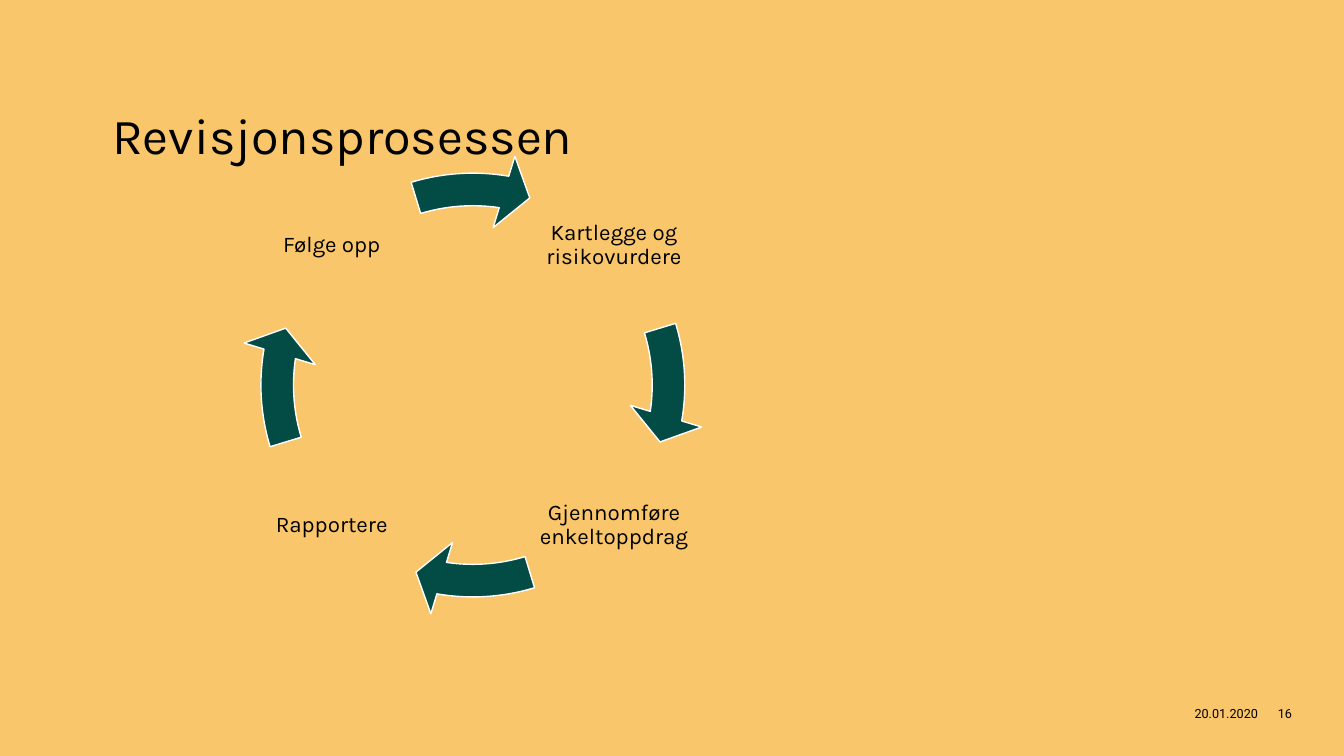
from pptx import Presentation
from pptx.dml.color import RGBColor
from pptx.enum.shapes import MSO_SHAPE
from pptx.enum.text import MSO_ANCHOR, MSO_AUTO_SIZE, PP_ALIGN
from pptx.util import Inches, Pt

LEFT, CENTER, RIGHT = PP_ALIGN.LEFT, PP_ALIGN.CENTER, PP_ALIGN.RIGHT
MIDDLE, BOTTOM = MSO_ANCHOR.MIDDLE, MSO_ANCHOR.BOTTOM
NO_AUTOFIT = MSO_AUTO_SIZE.NONE
CIRCULAR_ARROW = MSO_SHAPE.CIRCULAR_ARROW
TITLE_ONLY = 5

COLORS = {"background": "F9C66B", "text": "000000", "arrow": "034B45", "outline": "FFFFFF"}
TITLE_FONT = {"name": "Karla", "size": Pt(36)}
STEP_FONT = {"name": "Karla", "size": Pt(16)}
FOOTER_FONT = {"name": "Roboto", "size": Pt(9)}

COLUMNS, ROWS = 12, 12
STEP_SIZE = 1.64
CYCLE_SIZE = 4.62
CYCLE_CENTER = (4.69, 3.82)
STEP_OFFSET = (1.4, 1.39)
QUARTER_TURN, FULL_TURN = 54, 216
STEPS = [
    ("Kartlegge og risikovurdere", 1, -1),
    ("Gjennomføre enkeltoppdrag", 1, 1),
    ("Rapportere", -1, 1),
    ("Følge opp", -1, -1),
]


def color(name):
    return RGBColor.from_string(COLORS[name])


class ProcessSlide:
    def __init__(self, presentation):
        self.width = presentation.slide_width
        self.height = presentation.slide_height
        self.slide = presentation.slides.add_slide(presentation.slide_layouts[TITLE_ONLY])
        background = self.slide.background.fill
        background.solid()
        background.fore_color.rgb = color("background")

    def grid(self, column, row, columns, rows):
        return (
            round(column * self.width / COLUMNS),
            round(row * self.height / ROWS),
            round(columns * self.width / COLUMNS),
            round(rows * self.height / ROWS),
        )

    def set_text(self, shape, text, font, alignment, anchor, margins=(0.1, 0.05), spacing=1.0):
        frame = shape.text_frame
        side, edge = map(Inches, margins)
        frame_format = {
            "word_wrap": True,
            "auto_size": NO_AUTOFIT,
            "vertical_anchor": anchor,
            "margin_left": side,
            "margin_right": side,
            "margin_top": edge,
            "margin_bottom": edge,
        }
        for name, value in frame_format.items():
            setattr(frame, name, value)
        paragraph = frame.paragraphs[0]
        paragraph.text = text
        paragraph.alignment = alignment
        paragraph.line_spacing = spacing
        for name, value in font.items():
            setattr(paragraph.font, name, value)
        paragraph.font.color.rgb = color("text")

    def title(self, text, box):
        shape = self.slide.shapes.title
        for name, value in zip(("left", "top", "width", "height"), self.grid(*box)):
            setattr(shape, name, value)
        self.set_text(shape, text, TITLE_FONT, LEFT, BOTTOM, (0, 0))

    def footer(self, text, box, alignment):
        shape = self.slide.shapes.add_textbox(*self.grid(*box))
        self.set_text(shape, text, FOOTER_FONT, alignment, MIDDLE)

    def square(self, center, size):
        left, top = (Inches(middle - size / 2) for middle in center)
        return left, top, Inches(size), Inches(size)

    def step(self, text, horizontal, vertical):
        center = (
            CYCLE_CENTER[0] + horizontal * STEP_OFFSET[0],
            CYCLE_CENTER[1] + vertical * STEP_OFFSET[1],
        )
        shape = self.slide.shapes.add_textbox(*self.square(center, STEP_SIZE))
        self.set_text(shape, text, STEP_FONT, CENTER, MIDDLE, (0.02, 0.02), 0.9)

    def arrow(self, index):
        shape = self.slide.shapes.add_shape(CIRCULAR_ARROW, *self.square(CYCLE_CENTER, CYCLE_SIZE))
        turn = index * QUARTER_TURN
        adjustments = (0.07, 4.65, 5.5 + turn, (205.85 + turn) % FULL_TURN, 0.08)
        for position, value in enumerate(adjustments):
            shape.adjustments[position] = value
        shape.shadow.inherit = False
        shape.fill.solid()
        shape.fill.fore_color.rgb = color("arrow")
        shape.line.color.rgb = color("outline")
        shape.line.width = Pt(1)


def main():
    presentation = Presentation()
    presentation.slide_width = Inches(13.33)
    presentation.slide_height = Inches(7.5)
    page = ProcessSlide(presentation)
    page.title("Revisjonsprosessen", (1, 0, 9, 2.61))
    page.footer("20.01.2020", (10, 11, 1.32, 0.64), RIGHT)
    page.footer("16", (11.32, 11, 0.68, 0.64), LEFT)
    for index, step in enumerate(STEPS):
        page.step(*step)
        page.arrow(index)
    presentation.save("out.pptx")


if __name__ == "__main__":
    main()
